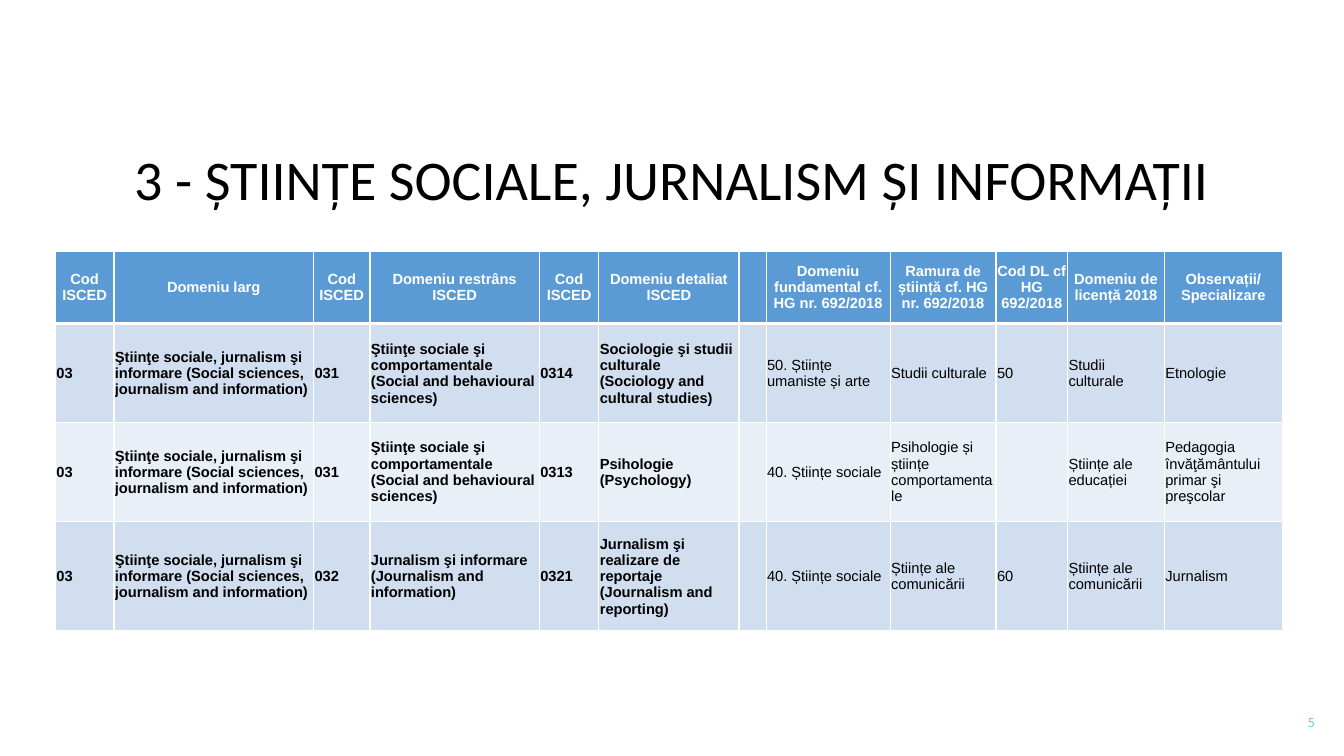
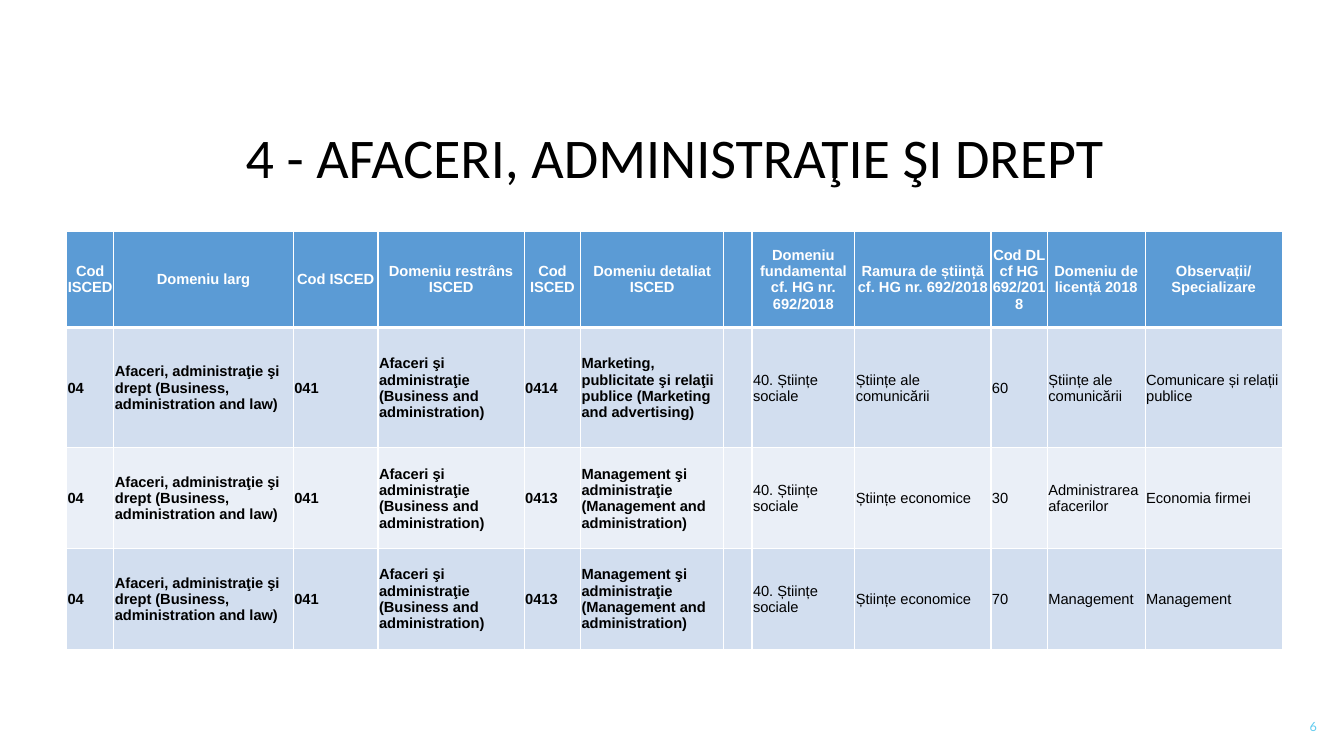
from lxml import etree
from pptx import Presentation
from pptx.dml.color import RGBColor
from pptx.enum.text import MSO_ANCHOR, PP_ALIGN
from pptx.oxml.ns import qn
from pptx.util import Inches, Pt

LEFT, CENTER, RIGHT = PP_ALIGN.LEFT, PP_ALIGN.CENTER, PP_ALIGN.RIGHT
MIDDLE = MSO_ANCHOR.MIDDLE

WHITE = "FFFFFF"
BLACK = "000000"
HEADER_BLUE = "5B9BD5"
NUMBER_BLUE = "5FCBEF"

HEADERS = [
    "Cod ISCED", "Domeniu larg", "Cod ISCED", "Domeniu restrâns ISCED",
    "Cod ISCED", "Domeniu detaliat ISCED", "",
    "Domeniu fundamental cf. HG nr. 692/2018",
    "Ramura de știință cf. HG nr. 692/2018", "Cod DL cf HG 692/2018",
    "Domeniu de licență 2018", "Observații/ Specializare",
]
SPACER_COLUMN = HEADERS.index("")  # ISCED columns before it are bold

SOCIAL = ["03", "Ştiinţe sociale, jurnalism şi informare "
          "(Social sciences, journalism and information)"]
BEHAVIOURAL = SOCIAL + ["031", "Ştiinţe sociale şi comportamentale "
                        "(Social and behavioural sciences)"]
BUSINESS = ["04", "Afaceri, administraţie şi drept (Business, administration and law)",
            "041", "Afaceri şi administraţie (Business and administration)"]
MANAGEMENT = BUSINESS + ["0413", "Management şi administraţie "
                         "(Management and administration)"]
SOCIAL_FIELD = "40. Științe sociale"
COMMUNICATION = "Științe ale comunicării"
ECONOMICS = "Științe economice"

SLIDES = [
    {
        "title": "3 - ȘTIINȚE SOCIALE, JURNALISM ȘI INFORMAȚII",
        "title_box": (0.91, 1.42, 11.5, 0.77),
        "number": "5",
        "number_box": (10.14, 6.97, 3, 0.4),
        "table_at": (0.55, 2.49),
        "columns": [0.58, 1.98, 0.56, 1.68, 0.59, 1.39,
                    0.27, 1.23, 1.05, 0.71, 0.96, 1.17],
        "heights": [0.72, 0.98, 0.98, 1.09],
        "bands": ("D0DEEF", "E9EFF7"),
        "rows": [
            BEHAVIOURAL + [
                "0314", "Sociologie şi studii culturale (Sociology and cultural studies)",
                "", "50. Științe umaniste și arte", "Studii culturale", "50",
                "Studii culturale", "Etnologie"],
            BEHAVIOURAL + [
                "0313", "Psihologie (Psychology)", "", SOCIAL_FIELD,
                "Psihologie și științe comportamentale", "",
                "Științe ale educației", "Pedagogia învăţământului primar şi preşcolar"],
            SOCIAL + [
                "032", "Jurnalism şi informare (Journalism and information)",
                "0321", "Jurnalism şi realizare de reportaje (Journalism and reporting)",
                "", SOCIAL_FIELD, COMMUNICATION, "60", COMMUNICATION, "Jurnalism"],
        ],
    },
    {
        "title": "4 - AFACERI, ADMINISTRAŢIE ŞI DREPT",
        "title_box": (0.94, 1.23, 11.5, 0.72),
        "number": "6",
        "number_box": (10.16, 7.01, 3, 0.4),
        "table_at": (0.66, 2.3),
        "columns": [0.47, 1.78, 0.84, 1.45, 0.56, 1.42,
                    0.28, 1.02, 1.35, 0.56, 0.97, 1.36],
        "heights": [0.95, 1.19, 1, 1],
        "bands": ("D2DEEF", "EAEFF7"),
        "rows": [
            BUSINESS + [
                "0414", "Marketing, publicitate şi relaţii publice "
                "(Marketing and advertising)",
                "", SOCIAL_FIELD, COMMUNICATION, "60", COMMUNICATION,
                "Comunicare și relații publice"],
            MANAGEMENT + ["", SOCIAL_FIELD, ECONOMICS, "30",
                          "Administrarea afacerilor", "Economia firmei"],
            MANAGEMENT + ["", SOCIAL_FIELD, ECONOMICS, "70",
                          "Management", "Management"],
        ],
    },
]


def color(value):
    return RGBColor.from_string(value)


def write_text(text_frame, text, *, font, size, text_color, bold=False,
               align=LEFT, line_spacing=None):
    text_frame.word_wrap = True
    paragraph = text_frame.paragraphs[0]
    paragraph.alignment = align
    if line_spacing:
        paragraph.line_spacing = line_spacing
    paragraph.font.size = Pt(size)
    if not text:
        return
    run = paragraph.add_run()
    run.text = text
    run.font.name = font
    run.font.size = Pt(size)
    run.font.bold = bold
    run.font.color.rgb = color(text_color)


def add_text_box(slide, box, text, **text_format):
    shape = slide.shapes.add_textbox(*map(Inches, box))
    shape.text_frame.vertical_anchor = MIDDLE
    write_text(shape.text_frame, text, **text_format)


def set_borders(cell, top, bottom):
    """Draw white cell borders; call before the fill, which must follow them."""
    properties = cell._tc.get_or_add_tcPr()
    for side, width in (("L", 1), ("R", 1), ("T", top), ("B", bottom)):
        line = etree.SubElement(properties, qn(f"a:ln{side}"), w=str(int(Pt(width))))
        fill = etree.SubElement(line, qn("a:solidFill"))
        etree.SubElement(fill, qn("a:srgbClr"), val=WHITE)


def format_cell(cell, text, fill, margin, top, bottom, **text_format):
    set_borders(cell, top, bottom)
    cell.fill.solid()
    cell.fill.fore_color.rgb = color(fill)
    cell.vertical_anchor = MIDDLE
    cell.margin_left = cell.margin_right = cell.margin_top = Inches(margin)
    cell.margin_bottom = 0
    write_text(cell.text_frame, text, font="Arial", size=10.5, **text_format)


def add_domain_table(slide, position, columns, heights, bands, rows):
    size = sum(columns), sum(heights)
    table = slide.shapes.add_table(len(heights), len(columns),
                                   *map(Inches, position + size)).table
    for column, width in zip(table.columns, columns):
        column.width = Inches(width)
    for row, height in zip(table.rows, heights):
        row.height = Inches(height)
    for index, text in enumerate(HEADERS):
        format_cell(table.cell(0, index), text, HEADER_BLUE, margin=0,
                    top=1, bottom=3, text_color=WHITE, bold=True, align=CENTER)
    for row_index, row in enumerate(rows, start=1):
        for index, text in enumerate(row):
            format_cell(table.cell(row_index, index), text,
                        bands[(row_index - 1) % 2], margin=0.01,
                        top=3 if row_index == 1 else 1, bottom=1,
                        text_color=BLACK, bold=index < SPACER_COLUMN)


def add_domain_slide(presentation, content):
    slide = presentation.slides.add_slide(presentation.slide_layouts[6])
    add_domain_table(slide, content["table_at"], content["columns"],
                     content["heights"], content["bands"], content["rows"])
    add_text_box(slide, content["number_box"], content["number"],
                 font="Lato", size=9, text_color=NUMBER_BLUE, align=RIGHT)
    add_text_box(slide, content["title_box"], content["title"],
                 font="Calibri", size=40, text_color=BLACK, align=CENTER,
                 line_spacing=0.9)


def main():
    presentation = Presentation()
    presentation.slide_width = Inches(13.33)
    presentation.slide_height = Inches(7.5)
    for content in SLIDES:
        add_domain_slide(presentation, content)
    presentation.save("out.pptx")


if __name__ == "__main__":
    main()
